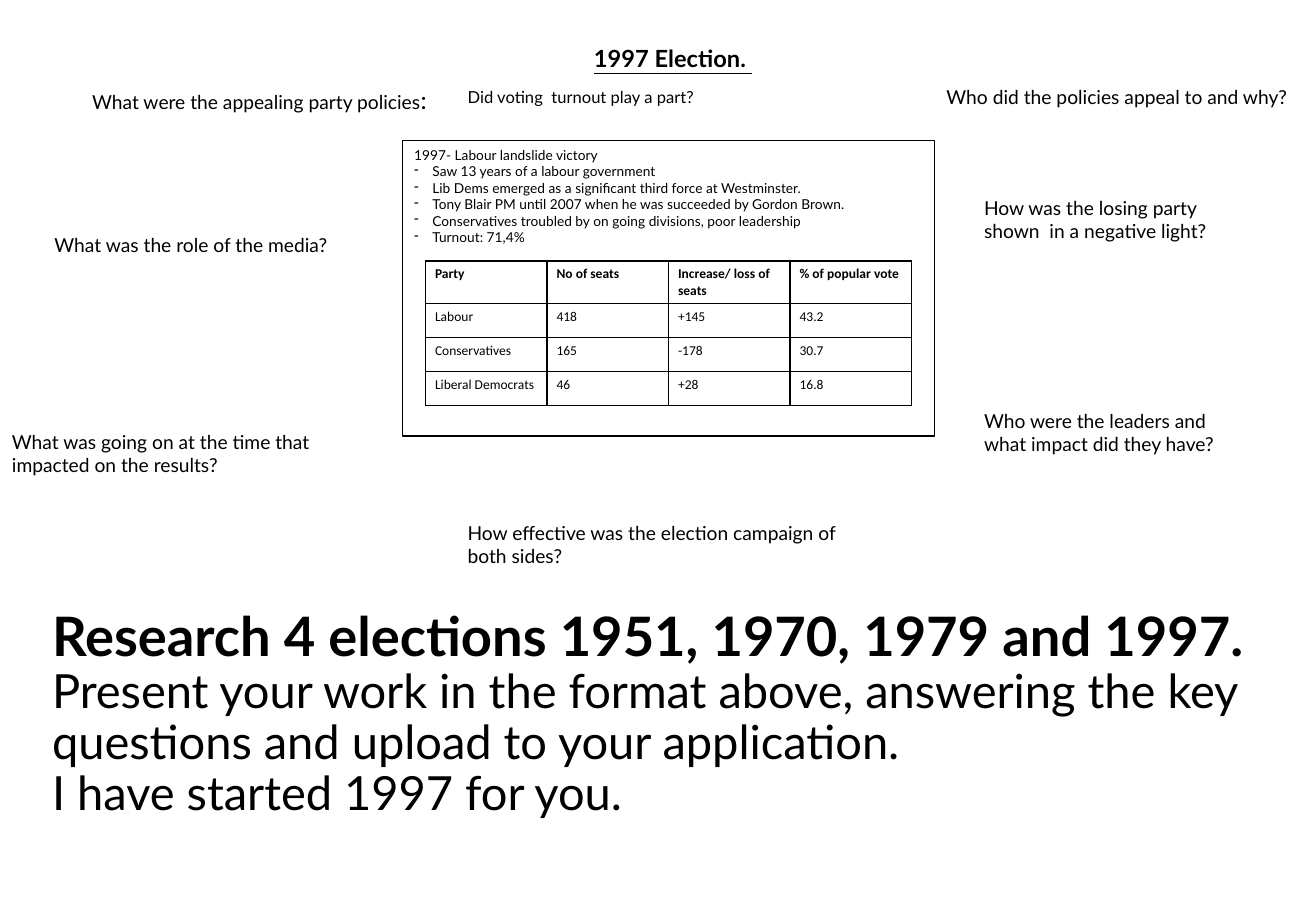
from pptx import Presentation
from pptx.dml.color import RGBColor
from pptx.enum.shapes import MSO_SHAPE
from pptx.enum.text import MSO_ANCHOR, PP_ALIGN
from pptx.oxml.xmlchemy import OxmlElement
from pptx.util import Emu, Pt

RECTANGLE = MSO_SHAPE.RECTANGLE
TOP, MIDDLE = MSO_ANCHOR.TOP, MSO_ANCHOR.MIDDLE
LEFT = PP_ALIGN.LEFT

EMU_PER_PX = 9144
COLORS = {"ink": "000000", "paper": "FFFFFF"}
BODY_FONT, TABLE_FONT = "Lato", "Calibri"
CELL_MARGINS = {"margin_left": 8, "margin_top": 4, "margin_right": 8, "margin_bottom": 4}
BULLET_INDENT = 15

QUESTIONS = [
    ((66, 65, 438, 35), [("What were the appealing party policies", 11.4), (":", 14.6)]),
    ((769, 65, 352, 29), [("Who did the policies appeal to and why?", 11.4)]),
    ((800, 157, 227, 48), [("How was the losing party shown  in a negative light?", 11.4)]),
    ((375, 424, 333, 48), [("How effective was the election campaign of both sides?", 11.4)]),
    ((0, 349, 329, 48), [("What was going on at the time that impacted on the results?", 11.4)]),
    ((35, 187, 483, 29), [("What was the role of the media?", 11.4)]),
    ((800, 332, 235, 48), [("Who were the leaders and what impact did they have?", 11.4)]),
    ((375, 67, 356, 27), [("Did voting  turnout play a part?", 9.8)]),
]
SUMMARY_HEADING = "1997- Labour landslide victory"
SUMMARY_POINTS = [
    "Saw 13 years of a labour government",
    "Lib Dems emerged as a significant third force at Westminster.",
    "Tony Blair PM until 2007 when he was succeeded by Gordon Brown.",
    "Conservatives troubled by on going divisions, poor leadership",
    "Turnout: 71,4%",
]
RESULTS = [
    ["Party", "No of seats", "Increase/ loss of seats", "% of popular vote"],
    ["Labour", "418", "+145", "43.2"],
    ["Conservatives", "165", "-178", "30.7"],
    ["Liberal Democrats", "46", "+28", "16.8"],
]
COLUMN_WIDTH, HEADER_HEIGHT, ROW_HEIGHT = 100, 35, 28
TASK_HEADING = "Research 4 elections 1951, 1970, 1979 and 1997."
TASK_DETAIL = [
    "Present your work in the format above, answering the key questions and upload to your application.",
    "I have started 1997 for you.",
]


def px(length):
    return Emu(length * EMU_PER_PX)


def rgb(name):
    return RGBColor.from_string(COLORS[name])


def apply_format(target, values):
    for name, value in values.items():
        setattr(target, name, value)


def add_run(paragraph, text, size, font_name=BODY_FONT, **style):
    run = paragraph.add_run()
    run.text = text
    apply_format(run.font, {"name": font_name, "size": Pt(size), **style})
    run.font.color.rgb = rgb("ink")


def add_text(slide, box, runs, **style):
    frame = slide.shapes.add_textbox(*map(px, box)).text_frame
    frame.word_wrap = True
    for text, size in runs:
        add_run(frame.paragraphs[0], text, size, **style)


def add_dash(paragraph):
    properties = paragraph._p.get_or_add_pPr()
    properties.set("marL", str(px(BULLET_INDENT)))
    properties.set("indent", str(px(-BULLET_INDENT)))
    dash = OxmlElement("a:buChar")
    dash.set("char", "-")
    properties.append(dash)


def add_summary(slide, box):
    panel = slide.shapes.add_shape(RECTANGLE, *map(px, box))
    panel.shadow.inherit = False
    panel.fill.background()
    panel.line.color.rgb = rgb("ink")
    panel.line.width = Pt(0.75)
    frame = panel.text_frame
    apply_format(frame, {"word_wrap": True, "vertical_anchor": TOP})
    heading = frame.paragraphs[0]
    heading.alignment = LEFT
    add_run(heading, SUMMARY_HEADING, 8.1)
    for text in SUMMARY_POINTS:
        point = frame.add_paragraph()
        point.alignment = LEFT
        add_dash(point)
        add_run(point, text, 8.1)


def add_borders(cell):
    properties = cell._tc.get_or_add_tcPr()
    for position, side in enumerate(("a:lnL", "a:lnR", "a:lnT", "a:lnB")):
        border = OxmlElement(side)
        border.set("w", str(Pt(1)))
        fill = OxmlElement("a:solidFill")
        color = OxmlElement("a:srgbClr")
        color.set("val", COLORS["ink"])
        fill.append(color)
        border.append(fill)
        properties.insert(position, border)


def add_results(slide, left, top):
    heights = [HEADER_HEIGHT] + [ROW_HEIGHT] * (len(RESULTS) - 1)
    column_count = len(RESULTS[0])
    box = (left, top, COLUMN_WIDTH * column_count, sum(heights))
    table = slide.shapes.add_table(len(RESULTS), column_count, *map(px, box)).table
    apply_format(table, {"first_row": False, "horz_banding": False})
    for row_index, (height, values) in enumerate(zip(heights, RESULTS)):
        table.rows[row_index].height = px(height)
        for column_index, text in enumerate(values):
            cell = table.cell(row_index, column_index)
            apply_format(cell, {side: px(margin) for side, margin in CELL_MARGINS.items()})
            cell.fill.solid()
            cell.fill.fore_color.rgb = rgb("paper")
            add_borders(cell)
            add_run(cell.text_frame.paragraphs[0], text, 8, TABLE_FONT, bold=row_index == 0)


def add_task(slide, box):
    frame = slide.shapes.add_textbox(*map(px, box)).text_frame
    apply_format(frame, {"word_wrap": True, "vertical_anchor": MIDDLE})
    task = frame.paragraphs[0]
    task.line_spacing = 0.9
    add_run(task, TASK_HEADING, 32.2, bold=True)
    for text in TASK_DETAIL:
        task.add_line_break()
        add_run(task, text, 27.9)


def main():
    presentation = Presentation()
    apply_format(presentation, {"slide_width": px(1083), "slide_height": px(750)})
    slide = presentation.slides.add_slide(presentation.slide_layouts[6])
    for box, runs in QUESTIONS:
        add_text(slide, box, runs)
    add_summary(slide, (331, 116, 438, 243))
    add_text(slide, (479, 31, 316, 34), [("1997 Election. ", 14)], bold=True, underline=True)
    add_results(slide, 350, 215)
    add_task(slide, (33, 492, 1035, 193))
    presentation.save("out.pptx")


if __name__ == "__main__":
    main()
